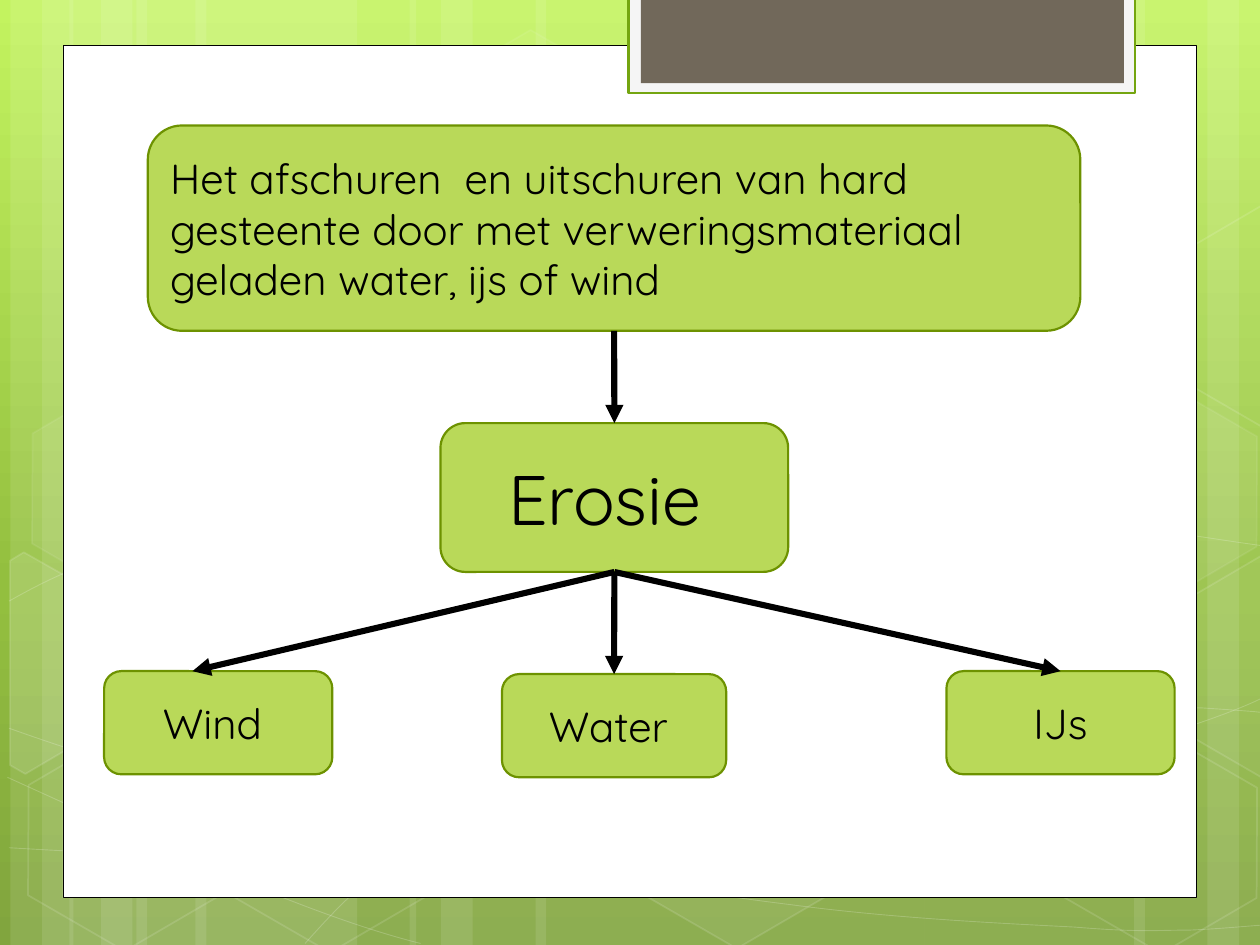
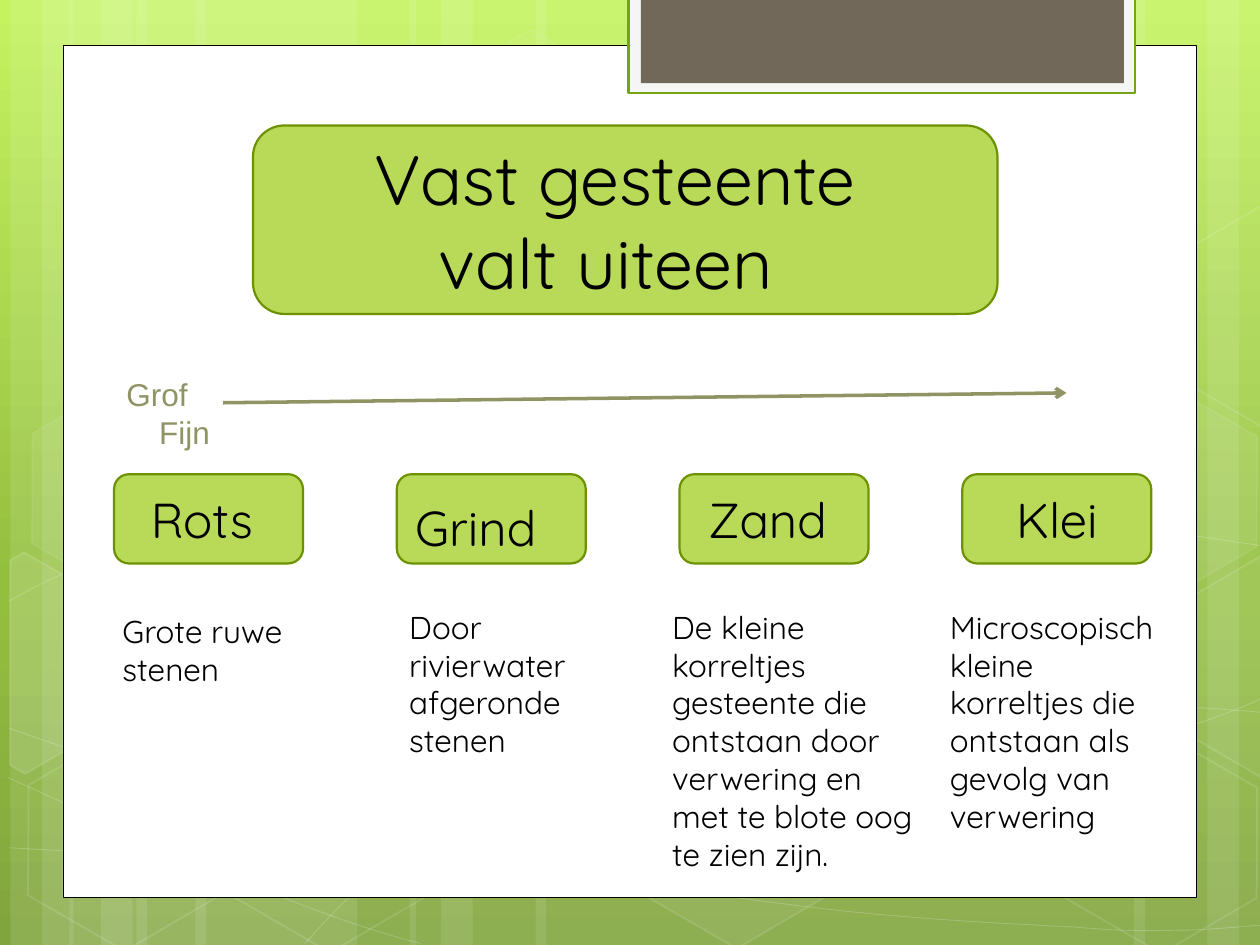
"""Builds two slides on erosion and the breaking up of rock."""
from copy import deepcopy
from math import cos, radians, sin

from lxml.etree import SubElement as Sub
from pptx import Presentation
from pptx.dml.color import RGBColor as Rgb
from pptx.enum.shapes import MSO_CONNECTOR as Conn, MSO_SHAPE as Kind
from pptx.enum.text import MSO_ANCHOR as Anchor, PP_ALIGN as Align
from pptx.oxml.ns import qn
from pptx.util import Cm, Pt

WIDE, HIGH, TILT = 25.4, 19.05, 30
WHITE, BLACK, OLIVE = "FFFFFF", "000000", "909465"
LIME, EDGE = "94C600", "6D9200"
FONT = "Quicksand"
SKY = [(0, "C3F35F"), (0.62, "93BF3F"), (1, "81A53E")]

BANDS = [
    (2.75, 4.45, 0), (0.21, 1.27, 0), (0.85, 2.12, 0), (3.94, 4.45, 0), (1.4, 1.27, 0),
    (2.04, 2.12, 0), (18.63, 4.45, 180), (24.34, 1.27, 180), (22.86, 2.12, 180),
    (10.8, 7.83, 0), (8.26, 1.27, 0), (8.89, 2.12, 0),
]
CURVES = [
    [(0.18, 17.09), (1.55, 17.17), (2.92, 17.25), (4.83, 17.22), (6.73, 17.2),
     (9.09, 17.15), (11.63, 16.89), (14.17, 16.64), (17.78, 16.15), (20.12, 15.67),
     (22.43, 15.19), (24.82, 14.43), (25.58, 14)],
    [(0.18, 12.12), (0.91, 11.71), (1.65, 11.33), (3.07, 10.95), (4.52, 10.57),
     (6.58, 10.01), (8.81, 9.83), (11.07, 9.65), (13.82, 9.63), (16.61, 9.83),
     (19.41, 10.03), (24.05, 10.82), (25.58, 11.02)],
    [(0.15, 15.67), (3.23, 17.07), (6.27, 18.47), (8.48, 19.02)],
    [(0.18, 14.68), (0.97, 14.96), (1.78, 15.24), (3.25, 15.65), (4.72, 16.03),
     (6.93, 16.66), (9.07, 17.09), (11.18, 17.53), (13.84, 17.98), (15.95, 18.24),
     (18.06, 18.52), (20.32, 18.62), (21.67, 18.69), (22.99, 18.8), (23.34, 18.75),
     (24, 18.75), (24.66, 18.72), (25.12, 18.67), (25.58, 18.64)],
    [(6.15, 19.02), (6.6, 18.52), (7.06, 18.01), (7.67, 17.55), (8.28, 17.09),
     (9.14, 16.59), (9.86, 16.23), (10.57, 15.88), (11, 15.72), (11.94, 15.47),
     (12.85, 15.21), (14.55, 14.86), (15.44, 14.68), (16.36, 14.5), (16.48, 14.5),
     (17.27, 14.45), (18.06, 14.38), (19.3, 14.3), (20.17, 14.27), (21.06, 14.25),
     (22.5, 14.27), (22.5, 14.27), (23.07, 14.27), (23.64, 14.27), (24.21, 14.27),
     (24.66, 14.3), (25.1, 14.33), (25.32, 14.35), (25.55, 14.38), (25.48, 14.35),
     (25.55, 14.38)],
]
HEXES = [
    (8.48, 0.91, 4, 8), (12.62, 14.96, 6, 12), (0.28, 15.01, 0, 12), (0.36, 7.92, 7, 8),
    (4.42, 15.04, 0, 12), (19.13, 11.51, 10, 12), (21.18, 15.06, 0, 12), (21.18, 7.98, 7, 8),
]
CUTS = [
    (10, (0.91, 13.59), [(0.2, 11.3), (0.48, 11.13), (2.44, 12.24), (2.41, 14.48),
                         (0.51, 15.6), (0.2, 15.42)]),
    (4, (25.02, 13.21), [(23.52, 12.32), (25.43, 11.2), (25.63, 11.33), (25.63, 15.57),
                         (25.45, 15.67), (23.52, 14.55)]),
    (0, (25.02, 6.12), [(23.52, 5.26), (25.43, 4.14), (25.65, 4.27), (25.63, 8.51),
                        (25.45, 8.61), (23.52, 7.49)]),
]
FRAME = [
    ((1.27, 0.91, 22.86, 17.19), WHITE, (BLACK, 0.5)),
    ((12.67, -0.05, 10.22, 1.93), "F5F5F5", ("74A510", 1.25)),
    ((12.92, -0.05, 9.74, 1.73), "71685A", None),
]

TOPIC = ("Erosie ", (8.88, 8.53, 7.01, 3), 40)
MEANING = ("Het afschuren  en uitschuren van hard gesteente door met verweringsmateriaal "
           "geladen water, ijs of wind", (2.98, 2.53, 18.8, 4.14), 24)
WIND = ("Wind ", (2.1, 13.53, 4.6, 2.08), 24)
WATER = ("Water ", (10.12, 13.59, 4.52, 2.08), 24)
ICE = ("IJs", (19.08, 13.53, 4.6, 2.08), 24)

TITLE = ("Vast gesteente\nvalt uiteen ", (5.1, 2.53, 15.01, 3.8), 40)
PLAIN, SHIFT, DROP = (0.25, 0.13), (0.65, 0.13), (0.61, 0.45)
GRAINS = [
    ("Rots ", PLAIN, "Grote ruwe stenen", (2.22, 12.22, 4.11, 1.8)),
    ("Grind ", DROP, "Door rivierwater afgeronde stenen", (8, 12.13, 4.11, 3.33)),
    ("Zand ", PLAIN, "De kleine korreltjes gesteente die ontstaan door verwering en met te "
                     "blote oog te zien zijn.", (13.3, 12.13, 5.59, 5.64)),
    ("Klei", PLAIN, "Microscopisch kleine korreltjes die ontstaan als gevolg van verwering",
     (18.9, 12.13, 5, 4.88)),
]


def color(text):
    return Rgb.from_string(text)


def fade(node, alpha):
    if alpha < 100:
        tint = node.find(qn("a:solidFill")).find(qn("a:srgbClr"))
        Sub(tint, qn("a:alpha")).set("val", str(alpha * 1000))


def paint(shape, fill=None, alpha=100, line=None, clear=100):
    shape.shadow.inherit = False
    props = shape.element.spPr
    if fill and alpha:
        shape.fill.solid()
        shape.fill.fore_color.rgb = color(fill)
        fade(props, alpha)
    else:
        shape.fill.background()
    if line:
        shape.line.color.rgb = color(line[0])
        shape.line.width = Pt(line[1])
        fade(props.find(qn("a:ln")), clear)
    else:
        shape.line.fill.background()
    return shape


def block(slide, kind, box, **style):
    return paint(slide.shapes.add_shape(kind, *map(Cm, box)), **style)


def outline(slide, points, close, **style):
    first, *rest = [(Cm(x), Cm(y)) for x, y in points]
    pen = slide.shapes.build_freeform(*first)
    pen.add_line_segments(rest, close=close)
    return paint(pen.convert_to_shape(), **style)


def curve(slide, knots):
    shape = outline(slide, knots, False, line=(WHITE, 0.5), clear=20)
    track = shape.element.spPr.find(".//" + qn("a:path"))
    steps = track.findall(qn("a:lnTo"))
    for i in range(0, len(steps), 3):
        arc = Sub(track, qn("a:cubicBezTo"))
        for step in steps[i:i + 3]:
            arc.append(step[0])
            track.remove(step)


def turn(points, mid):
    c, s = cos(radians(TILT)), sin(radians(TILT))
    gaps = [(x - mid[0], y - mid[1]) for x, y in points]
    return [(mid[0] + x * c + y * s, mid[1] + y * c - x * s) for x, y in gaps]


def write(frame, text, size, align=Align.LEFT, tint=BLACK, font=FONT):
    frame.text = text
    frame.word_wrap = True
    for par in frame.paragraphs:
        par.alignment = align
        for run in par.runs:
            run.font.size, run.font.name = Pt(size), font
            run.font.color.rgb = color(tint)


def card(slide, text, box, size, align=Align.CENTER, pad=PLAIN):
    shape = block(slide, Kind.ROUNDED_RECTANGLE, box, fill=LIME, alpha=65, line=(EDGE, 1.25))
    frame = shape.text_frame
    write(frame, text, size, align)
    frame.vertical_anchor = Anchor.MIDDLE
    frame.margin_right, frame.margin_top = map(Cm, pad)
    return shape


def note(slide, text, box, **style):
    frame = slide.shapes.add_textbox(*map(Cm, box)).text_frame
    write(frame, text, 18, **style)
    return frame


def arrow(slide, ends, tint, width, head):
    link = slide.shapes.add_connector(Conn.STRAIGHT, *map(Cm, ends))
    link.line.color.rgb = color(tint)
    link.line.width = Pt(width)
    Sub(link.element.spPr.find(qn("a:ln")), qn("a:tailEnd")).set("type", head)
    Sub(link.element.spPr, qn("a:effectLst"))
    return link


def join(slide, start, goal=None, end=(0, 0)):
    link = arrow(slide, (0, 0, *end), BLACK, 3.5, "triangle")
    link.begin_connect(start, 2)
    if goal:
        link.end_connect(goal, 0)


def backdrop(master):
    fill = master.background.fill
    fill.gradient()
    fill.gradient_angle = 270
    stops = master.element.find(".//" + qn("p:bgPr")).find(".//" + qn("a:gsLst"))
    stops.append(deepcopy(stops[-1]))
    for stop, (place, tint) in zip(fill.gradient_stops, SKY):
        stop.position = place
        stop.color.rgb = color(tint)


def start(deck):
    slide = deck.slides.add_slide(deck.slide_layouts[6])
    for left, width, spin in BANDS:
        band = block(slide, Kind.RECTANGLE, (left, 0, width, HIGH), fill=WHITE, alpha=10)
        band.rotation = spin
    for knots in CURVES:
        curve(slide, knots)
    for left, top, alpha, clear in HEXES:
        cell = block(slide, Kind.HEXAGON, (left, top, 4.45, 3.86), fill=WHITE, alpha=alpha,
                     line=(WHITE, 1), clear=clear)
        cell.adjustments[0] = 0.285
        cell.rotation = TILT
    for alpha, mid, points in CUTS:
        cell = outline(slide, turn(points, mid), True, fill=WHITE, alpha=alpha,
                       line=(WHITE, 1), clear=12)
        cell.rotation = TILT
    for box, fill, line in FRAME:
        block(slide, Kind.RECTANGLE, box, fill=fill, line=line)
    return slide


def erosion(deck):
    slide = start(deck)
    topic = card(slide, *TOPIC)
    meaning = card(slide, *MEANING, align=Align.LEFT)
    wind, water, ice = [card(slide, *item) for item in (WIND, WATER, ICE)]
    join(slide, topic, end=(3.88, wind.top.cm))
    join(slide, topic, water)
    join(slide, topic, ice)
    join(slide, meaning, topic)


def grains(deck):
    slide = start(deck)
    card(slide, *TITLE, pad=SHIFT)
    for i, (name, pad, *_) in enumerate(GRAINS):
        card(slide, name, (2.3 + 5.7 * i, 9.56, 3.81, 1.8), 28, pad=pad)
    scale = note(slide, "Grof\vFijn", (2.3, 7.44, 20.9, 1.02), tint=OLIVE, font="Arial")
    props = scale.paragraphs[0]._p.get_or_add_pPr()
    props.set("marL", str(Cm(0.66)))
    props.set("indent", str(-Cm(0.66)))
    arrow(slide, (4.5, 8.12, 21.5, 7.92), OLIVE, 2, "arrow")
    for *_, text, box in GRAINS:
        note(slide, text, box)


def main():
    deck = Presentation()
    deck.slide_width, deck.slide_height = Cm(WIDE), Cm(HIGH)
    backdrop(deck.slide_master)
    erosion(deck)
    grains(deck)
    deck.save("out.pptx")


if __name__ == "__main__":
    main()
